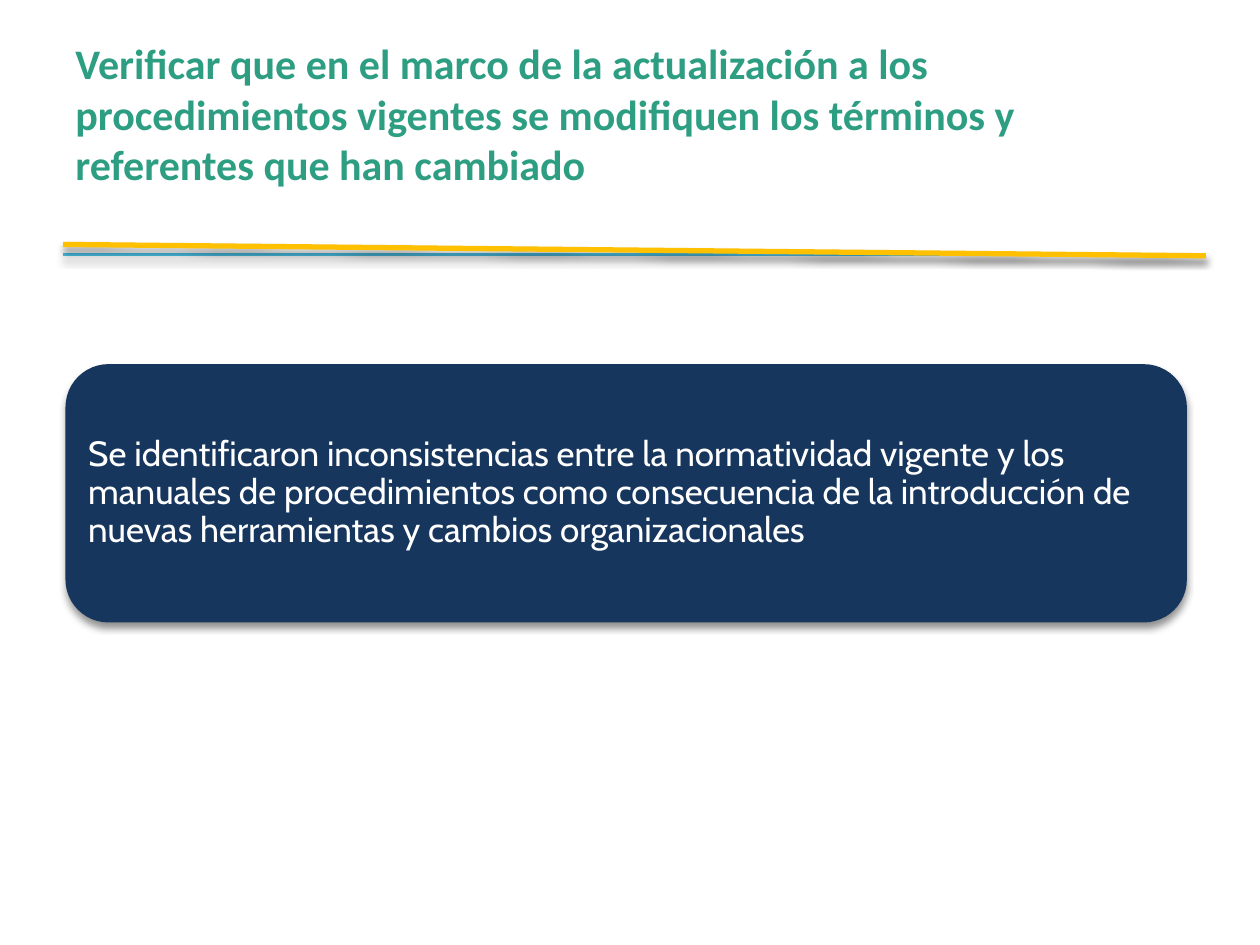
from dataclasses import dataclass

from lxml import etree
from pptx import Presentation
from pptx.dml.color import RGBColor
from pptx.enum.shapes import MSO_CONNECTOR, MSO_SHAPE
from pptx.enum.text import MSO_ANCHOR, PP_ALIGN
from pptx.oxml.ns import qn
from pptx.util import Inches, Pt

ROUND = MSO_SHAPE.ROUNDED_RECTANGLE
STRAIGHT = MSO_CONNECTOR.STRAIGHT
TOP, MIDDLE = MSO_ANCHOR.TOP, MSO_ANCHOR.MIDDLE
LEFT = PP_ALIGN.LEFT


@dataclass(frozen=True)
class Theme:
    green: RGBColor = RGBColor(0x2E, 0x9E, 0x83)
    navy: RGBColor = RGBColor(0x17, 0x36, 0x5D)
    white: RGBColor = RGBColor(0xFF, 0xFF, 0xFF)
    blue: RGBColor = RGBColor(0x48, 0xBC, 0xE0)
    gold: RGBColor = RGBColor(0xFF, 0xC0, 0x00)
    title: Pt = Pt(24)
    body: Pt = Pt(20)


theme = Theme()


def add_shadow(shape):
    """Give the shape a soft black shadow straight below it."""
    effects = etree.SubElement(shape._element.spPr, qn("a:effectLst"))
    outer = etree.SubElement(
        effects, qn("a:outerShdw"), blurRad=str(Pt(4)), dist=str(Pt(3)),
        dir="5400000", rotWithShape="0")
    black = etree.SubElement(outer, qn("a:srgbClr"), val="000000")
    etree.SubElement(black, qn("a:alpha"), val="43000")


def set_text(frame, text, font, size, color, bold=False):
    frame.word_wrap = True
    frame.text = text
    para = frame.paragraphs[0]
    para.alignment = LEFT
    face = para.runs[0].font
    face.name, face.size, face.bold = font, size, bold
    face.color.rgb = color


prs = Presentation()
prs.slide_width, prs.slide_height = Inches(10), Inches(7.5)
slide = prs.slides.add_slide(prs.slide_layouts[6])
shapes = slide.shapes

# Title
title = shapes.add_textbox(Inches(0.5), Inches(0.3), Inches(9), Inches(1.64))
frame = title.text_frame
set_text(frame,
         "Verificar que en el marco de la actualización a los procedimientos "
         "vigentes se modifiquen los términos y referentes que han cambiado",
         "Calibri", theme.title, theme.green, bold=True)
frame.vertical_anchor = TOP
frame.margin_top = 0

# Finding
card = shapes.add_shape(ROUND, Inches(0.52), Inches(2.89),
                        Inches(8.9), Inches(2.05))
card.fill.solid()
card.fill.fore_color.rgb = theme.navy
card.line.fill.background()
add_shadow(card)
frame = card.text_frame
set_text(frame,
         "Se identificaron inconsistencias entre la normatividad vigente y los "
         "manuales de procedimientos como consecuencia de la introducción de "
         "nuevas herramientas y cambios organizacionales",
         "Cabin", theme.body, theme.white)
frame.vertical_anchor = MIDDLE
# The rounded corners already inset the text by about 0.1 inch
frame.margin_left = frame.margin_right = Inches(0.08)
frame.paragraphs[0].line_spacing = 0.9

# Rules below the title
for start, end, color, width in (
    (2.02, 2.02, theme.blue, 1.5),
    (1.94, 2.03, theme.gold, 3),
):
    rule = shapes.add_connector(STRAIGHT, Inches(0.5), Inches(start),
                                Inches(9.57), Inches(end))
    rule.line.color.rgb = color
    rule.line.width = Pt(width)
    add_shadow(rule)

prs.save("out.pptx")
